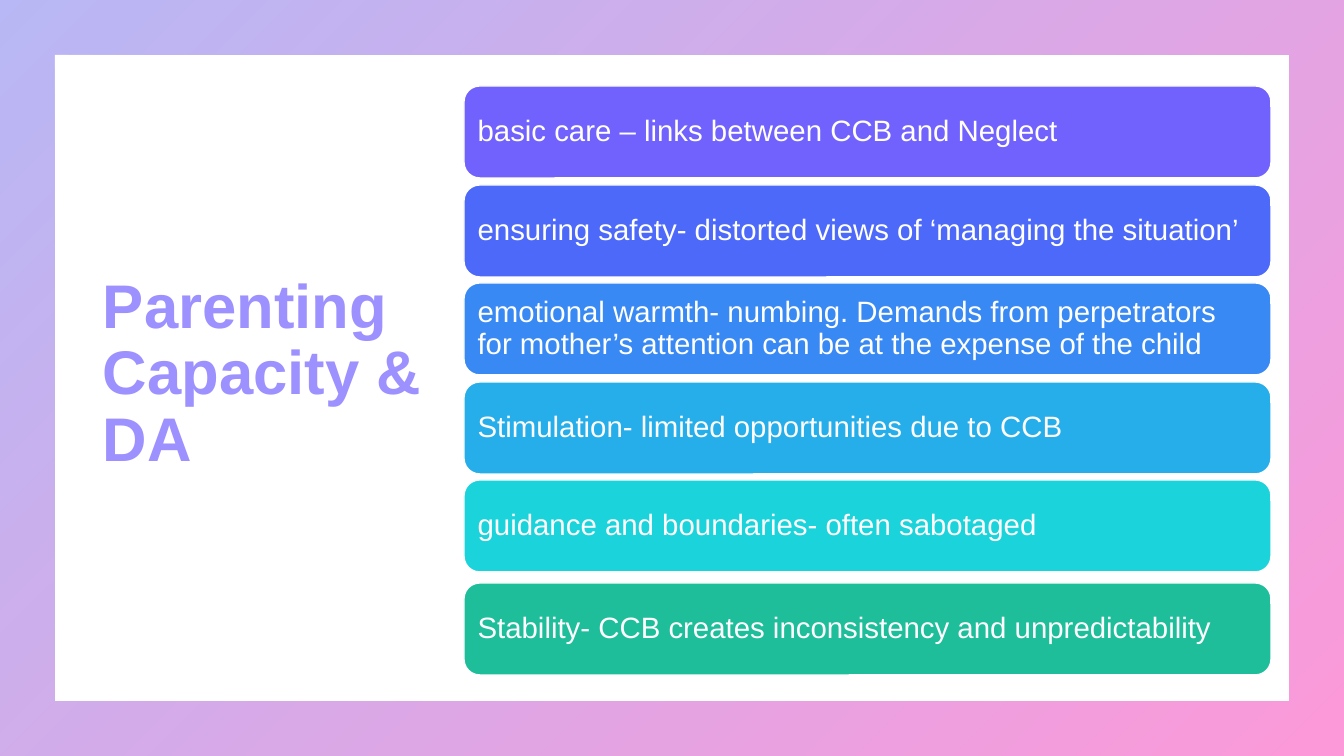
from dataclasses import dataclass

from lxml import etree
from pptx import Presentation
from pptx.dml.color import RGBColor
from pptx.enum.shapes import MSO_SHAPE
from pptx.enum.text import MSO_ANCHOR, MSO_AUTO_SIZE, PP_ALIGN
from pptx.oxml.ns import qn
from pptx.util import Emu, Pt

FRAME = MSO_SHAPE.FRAME
ROUNDED = MSO_SHAPE.ROUNDED_RECTANGLE
MIDDLE = MSO_ANCHOR.MIDDLE
NO_FIT = MSO_AUTO_SIZE.NONE
LEFT = PP_ALIGN.LEFT

EMU_PER_PX = 914400 / 100.8
SLIDE_WIDTH, SLIDE_HEIGHT = 1344, 756
TITLE_ONLY = 5

TITLE = "Parenting Capacity & DA"
CARDS = [
    ("basic care – links between CCB and Neglect", "7162FE"),
    ("ensuring safety- distorted views of ‘managing the situation’", "4D69F9"),
    ("emotional warmth- numbing. Demands from perpetrators for mother’s "
     "attention can be at the expense of the child", "3889F3"),
    ("Stimulation- limited opportunities due to CCB", "26AEEB"),
    ("guidance and boundaries- often sabotaged", "1BD3DB"),
    ("Stability- CCB creates inconsistency and unpredictability", "1EBE9B"),
]
CARD_LEFT, CARD_TOP, CARD_WIDTH, CARD_HEIGHT = 464, 86, 807, 92
CARD_PITCH = 98.6
LAST_CARD_DROP = 4


@dataclass(frozen=True)
class Theme:
    font: str = "Arial"
    white: str = "FFFFFF"
    title: str = "9C91FE"
    frame_start: str = "4D4EE6"
    frame_end: str = "F900A0"
    frame_opacity: int = 40
    title_size: int = 44
    card_size: int = 21


def px(length):
    return Emu(round(length * EMU_PER_PX))


def write_text(shape, text, *, size, color, font, bold=False, inset_x=10, inset_y=5):
    box = shape.text_frame
    box.word_wrap = True
    box.auto_size = NO_FIT
    box.vertical_anchor = MIDDLE
    box.margin_left = box.margin_right = px(inset_x)
    box.margin_top = box.margin_bottom = px(inset_y)
    para = box.paragraphs[0]
    para.alignment = LEFT
    para.line_spacing = 0.9
    span = para.add_run()
    span.text = text
    span.font.name = font
    span.font.size = Pt(size)
    span.font.bold = bold
    span.font.color.rgb = RGBColor.from_string(color)


class SlideBuilder:
    def __init__(self, page, theme):
        self.page = page
        self.theme = theme

    def shape(self, kind, left, top, width, height, adjustment):
        shape = self.page.shapes.add_shape(kind, px(left), px(top), px(width), px(height))
        shape.shadow.inherit = False
        shape.adjustments[0] = adjustment
        return shape

    def title(self, text, left, top, width, height):
        title = self.page.shapes.title
        title.left, title.top = px(left), px(top)
        title.width, title.height = px(width), px(height)
        write_text(title, text, size=self.theme.title_size, color=self.theme.title,
                   font=self.theme.font, bold=True)

    def border(self):
        """Frame the whole slide with a translucent diagonal gradient."""
        border = self.shape(FRAME, 0, 0, SLIDE_WIDTH, SLIDE_HEIGHT, 0.072)
        border.line.fill.background()
        border.fill.gradient()
        border.fill.gradient_angle = 315
        colors = (self.theme.frame_start, self.theme.frame_end)
        for stop, position, color in zip(border.fill.gradient_stops, (0, 1), colors):
            stop.position = position
            stop.color.rgb = RGBColor.from_string(color)
        for color in border.element.spPr.iter(qn("a:srgbClr")):
            alpha = etree.SubElement(color, qn("a:alpha"))
            alpha.set("val", str(self.theme.frame_opacity * 1000))

    def card(self, text, color, top):
        card = self.shape(ROUNDED, CARD_LEFT, top, CARD_WIDTH, CARD_HEIGHT, 0.17)
        card.fill.solid()
        card.fill.fore_color.rgb = RGBColor.from_string(color)
        card.line.color.rgb = RGBColor.from_string(self.theme.white)
        card.line.width = Pt(1)
        write_text(card, text, size=self.theme.card_size, color=self.theme.white,
                   font=self.theme.font, inset_x=9, inset_y=9)


def main():
    deck = Presentation()
    deck.slide_width, deck.slide_height = px(SLIDE_WIDTH), px(SLIDE_HEIGHT)
    page = deck.slides.add_slide(deck.slide_layouts[TITLE_ONLY])
    builder = SlideBuilder(page, Theme())

    builder.border()
    builder.title(TITLE, 93, 68, 353, 614)
    for index, (text, color) in enumerate(CARDS):
        drop = LAST_CARD_DROP if index == len(CARDS) - 1 else 0
        builder.card(text, color, round(CARD_TOP + index * CARD_PITCH) + drop)

    deck.save("out.pptx")


if __name__ == "__main__":
    main()
